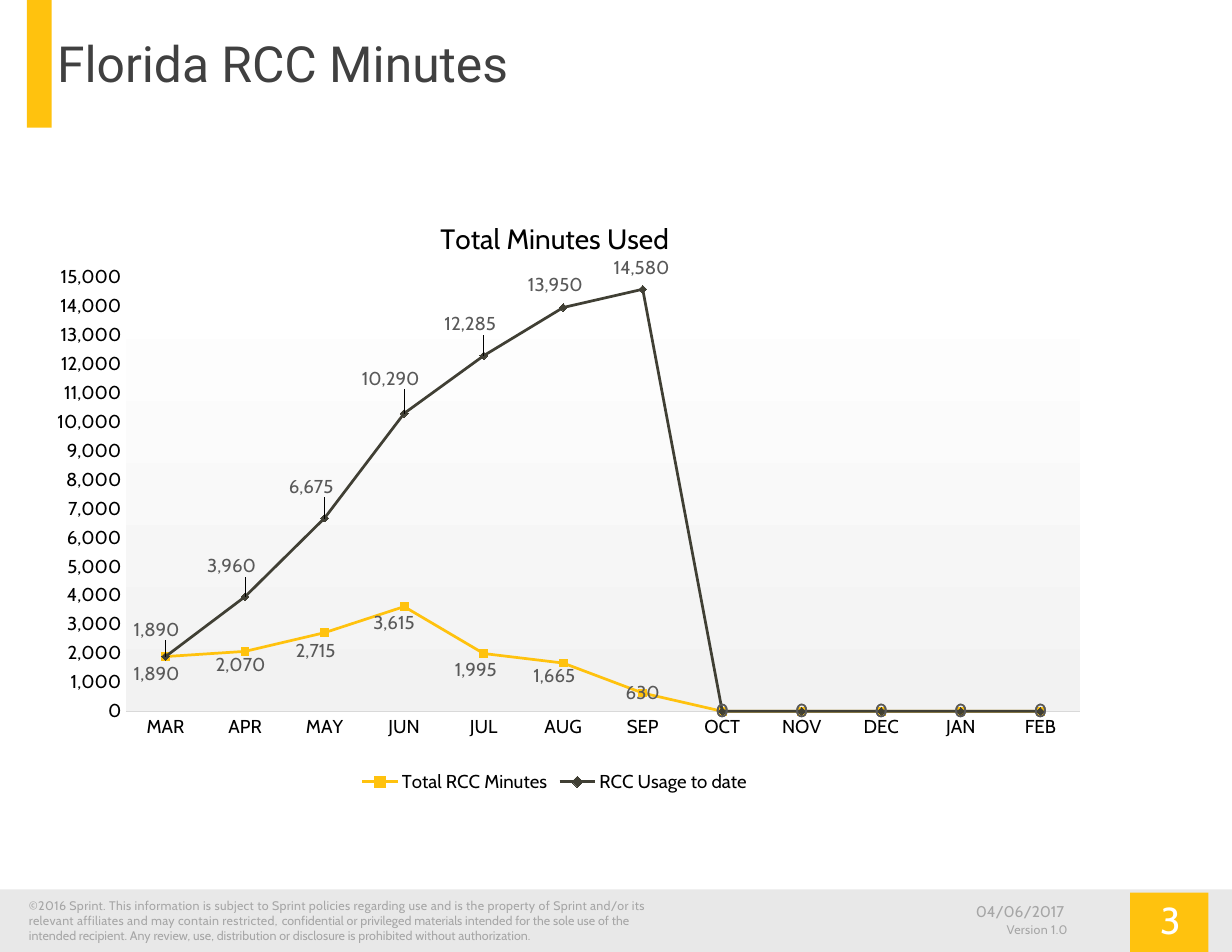
"""Build the Florida RCC Minutes slide with its line chart."""
from lxml import etree
from pptx import Presentation
from pptx.chart.data import CategoryChartData
from pptx.dml.color import RGBColor
from pptx.enum.chart import XL_CHART_TYPE, XL_LABEL_POSITION, XL_LEGEND_POSITION, XL_TICK_MARK
from pptx.enum.shapes import MSO_SHAPE
from pptx.enum.text import MSO_ANCHOR, PP_ALIGN
from pptx.oxml import parse_xml
from pptx.oxml.ns import nsdecls, qn
from pptx.util import Inches, Pt

LINE = XL_CHART_TYPE.LINE
LABEL_CENTER = XL_LABEL_POSITION.CENTER
LEGEND_BOTTOM = XL_LEGEND_POSITION.BOTTOM
NO_TICK = XL_TICK_MARK.NONE
RECTANGLE = MSO_SHAPE.RECTANGLE
TOP, MIDDLE = MSO_ANCHOR.TOP, MSO_ANCHOR.MIDDLE
LEFT, CENTER, RIGHT = PP_ALIGN.LEFT, PP_ALIGN.CENTER, PP_ALIGN.RIGHT

THEME = {
    "yellow": "FFC20E", "band": "E8E8E8", "footer": "A6A6A6", "title": "404040",
    "white": "FFFFFF", "black": "000000", "olive": "403F34", "label": "595959",
    "axis": "D9D9D9", "plot_end": "F2F2F2",
    "body_font": "Cabin", "title_font": "Roboto",
    "title_size": 32, "page_size": 24, "chart_title_size": 18, "chart_size": 12,
    "date_size": 10, "note_size": 8,
}

BLOCKS = [
    ((0.24, 0, 0.22, 1.14), "yellow"),
    ((0, 7.94, 11, 0.56), "band"),
    ((10.09, 7.97, 0.7, 0.53), "yellow"),
]
INSET = (0.1, 0.05)
COPYRIGHT = (
    ("©2016 Sprint. This information is subject to Sprint policies regarding use and is the "
     "property of Sprint and/or its relevant affiliates and may contain restricted, ", 20),
    ("confidential or privileged materials intended for the sole use of the intended recipient. "
     "Any review, use, distribution or disclosure is prohibited without authorization.", 0),
)
TEXTS = [
    ((0.16, 7.97, 5.75, 0.64), COPYRIGHT, "note_size", "footer", "body_font", LEFT, TOP, INSET),
    ((9.76, 7.97, 1.38, 0.48), (("3", 0),), "page_size", "white", "body_font", CENTER, TOP, (0.08, 0.04)),
    ((7.85, 8, 1.75, 0.27), (("04/06/2017", 0),), "date_size", "footer", "body_font", RIGHT, TOP, INSET),
    ((8.89, 8.18, 1.36, 0.24), (("Version 1.0", 20),), "note_size", "footer", "body_font", LEFT, TOP, INSET),
    ((0.51, 0.1, 9.41, 0.92), (("Florida RCC Minutes", 0),), "title_size", "title", "title_font",
     LEFT, MIDDLE, (0, 0)),
]

CHART_TITLE = "Total Minutes Used"
CHART_AT = (0.26, 1.75, 9.39, 5.37)
PLOT_AT = {"x": 0.092, "y": 0.135, "w": 0.908, "h": 0.722}
MONTHS = ["MAR", "APR", "MAY", "JUN", "JUL", "AUG", "SEP", "OCT", "NOV", "DEC", "JAN", "FEB"]
SERIES = [
    {"name": "Total RCC Minutes", "color": "yellow",
     "minutes": [1890, 2070, 2715, 3615, 1995, 1665, 630, 0, 0, 0, 0, 0],
     "label_shifts": [(-0.08, 0.16), (-0.04, 0.12), (-0.08, 0.16), (-0.09, 0.15),
                      (-0.07, 0.15), (-0.08, 0.12)]},
    {"name": "RCC Usage to date", "color": "olive",
     "minutes": [1890, 3960, 6675, 10290, 12285, 13950, 14580, 0, 0, 0, 0, 0],
     "label_shifts": [(-0.08, -0.24), (-0.12, -0.27), (-0.12, -0.28), (-0.12, -0.31),
                      (-0.12, -0.28), (-0.07, -0.2), (-0.01, -0.19)]},
]


def color(name):
    """Return a theme colour."""
    return RGBColor.from_string(THEME[name])


def apply(target, values):
    """Set each named attribute on the target."""
    for name, value in values.items():
        setattr(target, name, value)


def set_font(font, size, ink, face="body_font"):
    """Style a font from the theme."""
    apply(font, {"name": THEME[face], "size": Pt(THEME[size]), "bold": False})
    font.color.rgb = color(ink)


def add_block(slide, at, fill):
    """Add a plain filled rectangle."""
    block = slide.shapes.add_shape(RECTANGLE, *map(Inches, at))
    block.shadow.inherit = False
    block.fill.solid()
    block.fill.fore_color.rgb = color(fill)
    block.line.fill.background()


def add_text(slide, at, pieces, size, ink, face, align, anchor, inset):
    """Add a wrapped text box with letter-spaced pieces."""
    frame = slide.shapes.add_textbox(*map(Inches, at)).text_frame
    across, down = map(Inches, inset)
    apply(frame, {"word_wrap": True, "vertical_anchor": anchor,
                  "margin_left": across, "margin_right": across,
                  "margin_top": down, "margin_bottom": down})
    paragraph = frame.paragraphs[0]
    paragraph.alignment = align
    for wording, spacing in pieces:
        run = paragraph.add_run()
        run.text = wording
        set_font(run.font, size, ink, face)
        run.font._element.set("spc", str(spacing))


def manual_layout(values, inner=False):
    """Return a chart layout element with the given fractions."""
    layout = parse_xml(f"<c:layout {nsdecls('c')}><c:manualLayout/></c:layout>")
    settings = {"layoutTarget": "inner", "xMode": "edge", "yMode": "edge"} if inner else {}
    for name, value in {**settings, **values}.items():
        etree.SubElement(layout[0], qn(f"c:{name}")).set("val", str(value))
    return layout


def style_plot_area(chart):
    """Place the plot area and fill the chart backgrounds."""
    space = chart._chartSpace
    area = space.chart.plotArea
    for old in area.findall(qn("c:layout")):
        area.remove(old)
    area.insert(0, manual_layout(PLOT_AT, inner=True))
    stops = "".join(f'<a:gs pos="{place}"><a:srgbClr val="{THEME[name]}"/></a:gs>'
                    for place, name in ((0, "white"), (100000, "plot_end")))
    area.append(parse_xml(
        f"<c:spPr {nsdecls('c', 'a')}><a:gradFill><a:gsLst>{stops}</a:gsLst>"
        '<a:lin ang="5400000" scaled="0"/></a:gradFill><a:ln><a:noFill/></a:ln></c:spPr>'))
    space.chart.addnext(parse_xml(
        f"<c:spPr {nsdecls('c', 'a')}><a:solidFill><a:srgbClr val=\"{THEME['white']}\"/>"
        "</a:solidFill><a:ln><a:noFill/></a:ln></c:spPr>"))


def style_series(series, content):
    """Style one line and shift its labels clear of it."""
    series.smooth = False
    series.marker.style = None
    series.format.line.width = Pt(1.75)
    series.format.line.color.rgb = color(content["color"])
    labels = series.data_labels
    apply(labels, {"show_value": True, "position": LABEL_CENTER,
                   "number_format": "#,##0", "number_format_is_linked": False})
    set_font(labels.font, "chart_size", "label")
    for index, (across, down) in enumerate(content["label_shifts"]):
        label = series.points[index].data_label
        label.position = LABEL_CENTER
        set_font(label.font, "chart_size", "label")
        shift = {"x": round(across / CHART_AT[2], 4), "y": round(down / CHART_AT[3], 4)}
        element = labels._element.findall(qn("c:dLbl"))[index]
        element.find(qn("c:idx")).addnext(manual_layout(shift))


def add_minutes_chart(slide):
    """Add the line chart of monthly and running minutes."""
    data = CategoryChartData(number_format="#,##0")
    data.categories = MONTHS
    for content in SERIES:
        data.add_series(content["name"], content["minutes"])
    chart = slide.shapes.add_chart(LINE, *map(Inches, CHART_AT), data).chart
    set_font(chart.font, "chart_size", "black")
    apply(chart, {"has_title": True, "has_legend": True})
    chart.chart_title.text_frame.text = CHART_TITLE
    set_font(chart.chart_title.text_frame.paragraphs[0].runs[0].font, "chart_title_size", "black")
    apply(chart.legend, {"position": LEGEND_BOTTOM, "include_in_layout": False})
    set_font(chart.legend.font, "chart_size", "black")
    for axis in (chart.category_axis, chart.value_axis):
        apply(axis, {"major_tick_mark": NO_TICK, "minor_tick_mark": NO_TICK,
                     "has_major_gridlines": False})
        set_font(axis.tick_labels.font, "chart_size", "black")
    apply(chart.value_axis, {"minimum_scale": 0, "maximum_scale": 15000, "major_unit": 1000})
    apply(chart.value_axis.tick_labels, {"number_format": "#,##0", "number_format_is_linked": False})
    chart.value_axis.format.line.fill.background()
    chart.category_axis.format.line.width = Pt(0.75)
    chart.category_axis.format.line.color.rgb = color("axis")
    chart.plots[0].vary_by_categories = False
    for series, content in zip(chart.plots[0].series, SERIES):
        style_series(series, content)
    style_plot_area(chart)


def main():
    """Build and save the slide."""
    deck = Presentation()
    apply(deck, {"slide_width": Inches(11), "slide_height": Inches(8.5)})
    slide = deck.slides.add_slide(deck.slide_layouts[6])
    for block in BLOCKS:
        add_block(slide, *block)
    for text in TEXTS:
        add_text(slide, *text)
    add_minutes_chart(slide)
    deck.save("out.pptx")


if __name__ == "__main__":
    main()
